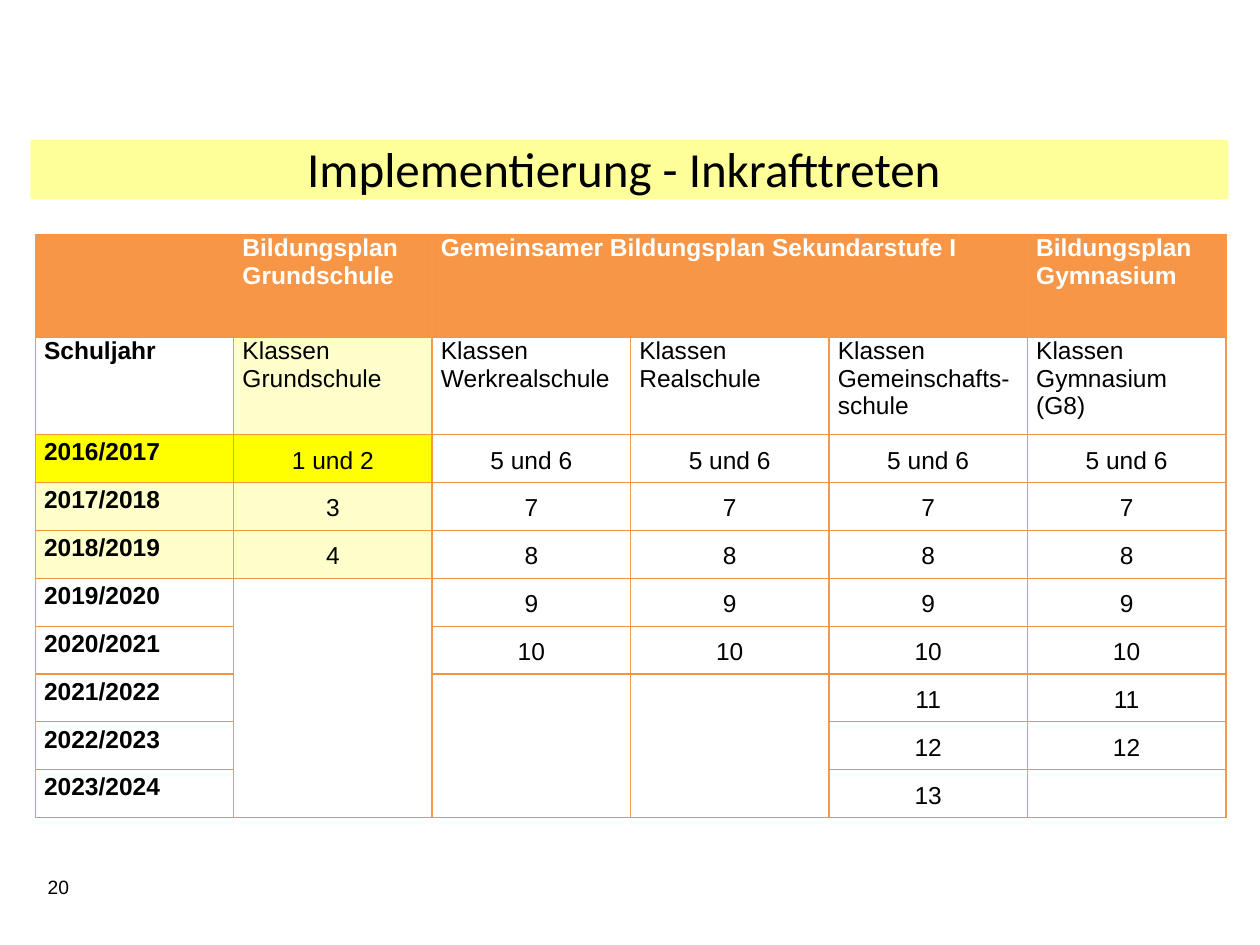
"""Build the slide on when the new curricula come into force."""
from lxml.etree import SubElement
from pptx import Presentation
from pptx.dml.color import RGBColor
from pptx.enum.shapes import MSO_SHAPE as Shape
from pptx.enum.text import MSO_ANCHOR as Anchor, PP_ALIGN as Align
from pptx.oxml.ns import qn
from pptx.util import Inches, Pt

COLORS = {
    "banner": "FFFF99",
    "header": "F79646",
    "vertical": "F7994B",
    "horizontal": "F69240",
    "current": "FFFF00",
    "primary": "FFFFCC",
    "white": "FFFFFF",
    "black": "000000",
}
PLANS = {
    1: "Bildungsplan Grundschule",
    2: "Gemeinsamer Bildungsplan Sekundarstufe I",
    5: "Bildungsplan\nGymnasium",
}
SCHOOLS = [
    "Schuljahr",
    "Klassen Grundschule",
    "Klassen \vWerkrealschule",
    "Klassen \vRealschule",
    "Klassen \vGemeinschafts-schule",
    "Klassen Gymnasium (G8)",
]
FIRST_YEAR, YEAR_COUNT, FIRST_YEAR_ROW = 2016, 8, 2
LAST_GRADES = [10, 10, 13, 12]
BORDERS = {
    "a:lnL": ("vertical", 1),
    "a:lnR": ("vertical", 1),
    "a:lnT": ("horizontal", 0.75),
    "a:lnB": ("horizontal", 0.75),
}


def color(name):
    return RGBColor.from_string(COLORS[name])


def format_text(frame, size, font="Arial", ink="black", bold=False, align=Align.LEFT):
    for paragraph in frame.paragraphs:
        paragraph.alignment = align
        paragraph.font.size = Pt(size)
        paragraph.font.name = font
        paragraph.font.bold = bold
        paragraph.font.color.rgb = color(ink)


def place(shape, left, top, width, height):
    shape.left, shape.top = Inches(left), Inches(top)
    shape.width, shape.height = Inches(width), Inches(height)


def add_title(slide):
    title = slide.shapes.title
    place(title, 0.24, 1.05, 9.51, 0.57)
    title.text_frame.text = "Implementierung - Inkrafttreten "
    title.text_frame.word_wrap = True
    title.text_frame.vertical_anchor = Anchor.MIDDLE
    format_text(title.text_frame, 28, "Calibri", align=Align.CENTER)

    banner = slide.shapes.add_shape(
        Shape.RECTANGLE, Inches(0.24), Inches(1.11), Inches(9.51), Inches(0.47))
    banner.shadow.inherit = False
    banner.fill.solid()
    banner.fill.fore_color.rgb = color("banner")
    banner.line.fill.background()
    title.element.addprevious(banner.element)


def style_cell(cell, fill=None):
    cell.margin_left = cell.margin_right = Inches(0.07)
    cell.margin_top = cell.margin_bottom = 0
    properties = cell._tc.get_or_add_tcPr()
    for tag, (name, width) in BORDERS.items():
        line = SubElement(properties, qn(tag), w=str(Pt(width)))
        solid = SubElement(line, qn("a:solidFill"))
        SubElement(solid, qn("a:srgbClr"), val=COLORS[name])
    if fill:
        cell.fill.solid()
        cell.fill.fore_color.rgb = color(fill)
    else:
        cell.fill.background()


def write_cell(cell, text, ink="black", bold=False, centered=False, spacing=None):
    cell.text = text
    if centered:
        cell.vertical_anchor = Anchor.MIDDLE
    format_text(cell.text_frame, 14, ink=ink, bold=bold,
                align=Align.CENTER if centered else Align.LEFT)
    for paragraph in cell.text_frame.paragraphs:
        paragraph.line_spacing = spacing


def cell_fill(row, column):
    if row == 0:
        return "header"
    if column > 1 or row > 4 or (row, column) == (1, 0):
        return None
    return "current" if row == FIRST_YEAR_ROW else "primary"


def add_schedule(slide):
    row_count = FIRST_YEAR_ROW + YEAR_COUNT
    table = slide.shapes.add_table(
        row_count, len(SCHOOLS), Inches(0.28), Inches(1.86), Inches(9.45), Inches(4.65)).table
    table.first_row = table.horz_banding = False
    heights = [0.82, 0.77] + [0.38] * YEAR_COUNT
    for row, height in zip(table.rows, heights):
        row.height = Inches(height)
    for row in range(row_count):
        for column in range(len(SCHOOLS)):
            style_cell(table.cell(row, column), cell_fill(row, column))

    table.cell(0, 2).merge(table.cell(0, 4))
    for column, plan in PLANS.items():
        write_cell(table.cell(0, column), plan, "white", True)
    for column, school in enumerate(SCHOOLS):
        write_cell(table.cell(1, column), school, bold=column == 0)
    for offset in range(YEAR_COUNT):
        year = FIRST_YEAR + offset
        write_cell(table.cell(FIRST_YEAR_ROW + offset, 0), f"{year}/{year + 1}",
                   bold=True, spacing=Pt(18))

    grades = [["1 und 2", "3", "4"]]
    grades += [["5 und 6", *map(str, range(7, last + 1))] for last in LAST_GRADES]
    for column, entries in enumerate(grades, 1):
        for row, entry in enumerate(entries, FIRST_YEAR_ROW):
            write_cell(table.cell(row, column), entry, centered=True, spacing=Pt(18))
        first_empty = FIRST_YEAR_ROW + len(entries)
        if first_empty < row_count - 1:
            table.cell(first_empty, column).merge(table.cell(row_count - 1, column))


def add_page_number(slide):
    box = slide.shapes.add_textbox(Inches(0.28), Inches(6.9), Inches(0.55), Inches(0.29))
    box.text_frame.word_wrap = True
    box.text_frame.text = "20"
    format_text(box.text_frame, 11)


def main():
    presentation = Presentation()
    presentation.slide_width, presentation.slide_height = Inches(10), Inches(7.5)
    slide = presentation.slides.add_slide(presentation.slide_layouts[5])
    add_title(slide)
    add_schedule(slide)
    add_page_number(slide)
    presentation.save("out.pptx")


if __name__ == "__main__":
    main()
